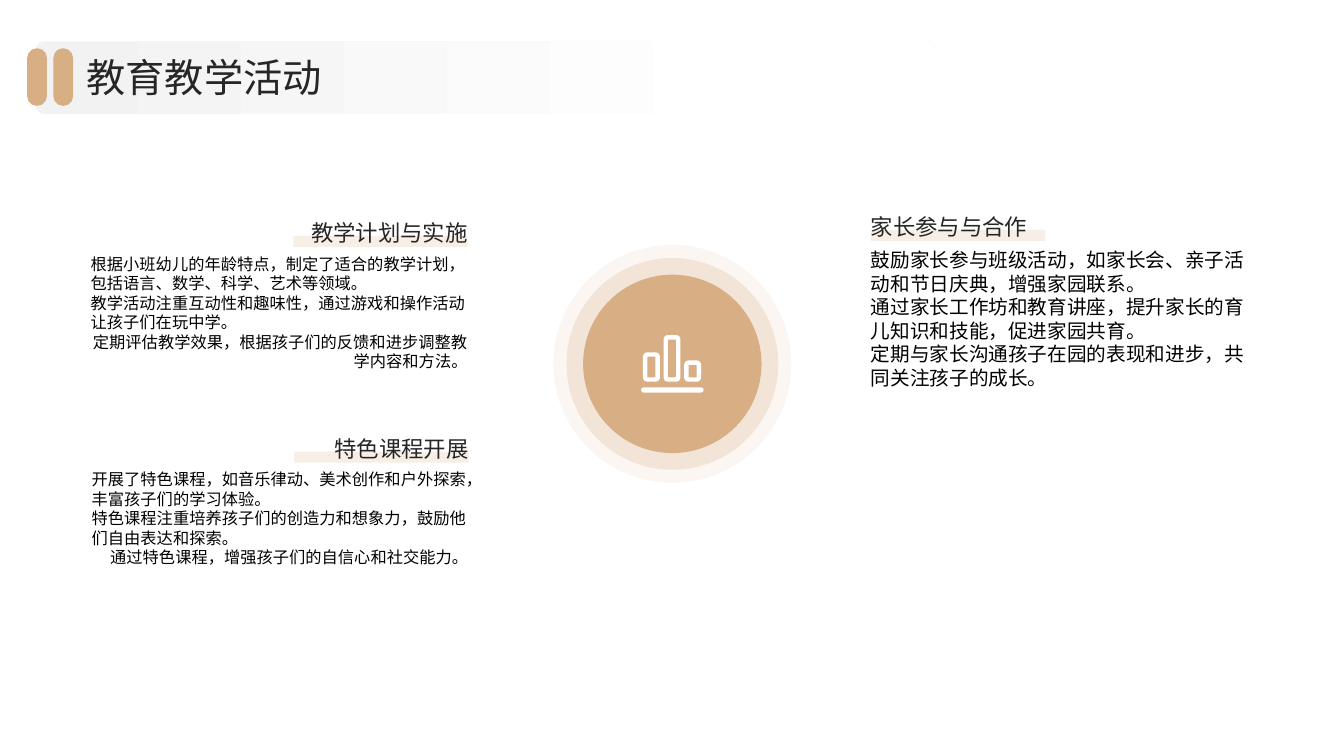
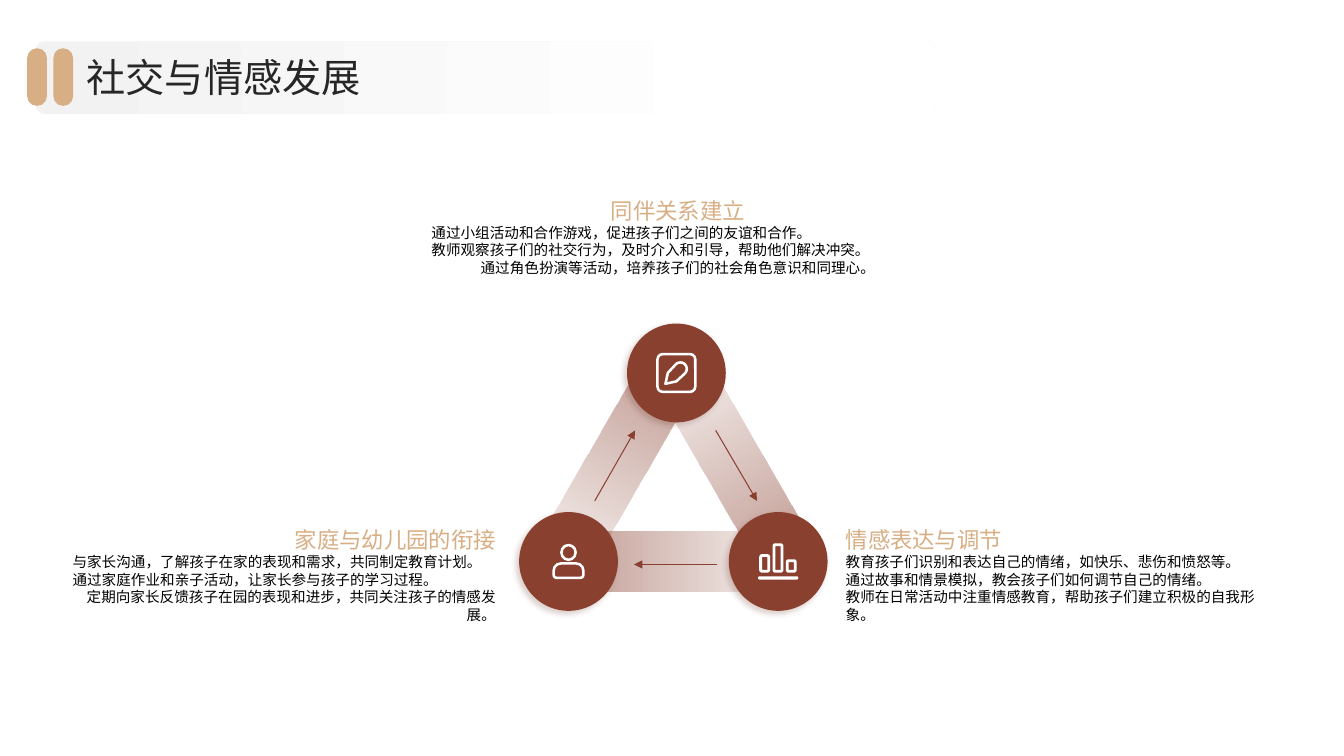
from dataclasses import dataclass
from math import cos, pi, sin

from lxml.etree import SubElement
from pptx import Presentation
from pptx.dml.color import RGBColor
from pptx.enum.shapes import MSO_CONNECTOR, MSO_SHAPE as SHAPE
from pptx.enum.text import MSO_ANCHOR as ANCHOR, MSO_AUTO_SIZE, PP_ALIGN as ALIGN
from pptx.oxml.ns import qn
from pptx.util import Inches, Pt

CELL = Inches(0.1)
COLUMNS, ROWS = 133.33, 75
FONT = "Noto Sans CJK SC"
COLOURS = {
    "sand": "D8AE84", "cream": "F7EFE6", "brick": "89402F", "shade": "673023",
    "ink": "262626", "black": "000000", "white": "FFFFFF", "mist": "F2F2F2",
}


def cells(count):
    return round(count * CELL)


def colour(name):
    return RGBColor.from_string(COLOURS[name])


@dataclass
class Box:
    left: float
    top: float
    width: float
    height: float

    def at(self, column, row, width, height):
        return Box(self.left + column, self.top + row, width, height)

    def share(self, x, y, width, height):
        return self.at(x * self.width, y * self.height,
                       width * self.width, height * self.height)

    def centred(self, width, height):
        return self.at((self.width - width) / 2, (self.height - height) / 2, width, height)

    def emu(self):
        return [cells(n) for n in (self.left, self.top, self.width, self.height)]


def set_alpha(shape, alphas):
    for tint, alpha in zip(shape._element.spPr.iter(qn("a:srgbClr")), alphas):
        SubElement(tint, qn("a:alpha")).set("val", str(alpha * 1000))


def add_shape(page, kind, box, fill, adjust=()):
    shape = page.shapes.add_shape(kind, *box.emu())
    shape.shadow.inherit = False
    shape.fill.solid()
    shape.fill.fore_color.rgb = colour(fill)
    shape.line.fill.background()
    for index, value in enumerate(adjust):
        shape.adjustments[index] = value
    return shape


def set_gradient(shape, stops, angle):
    shape.fill.gradient()
    shape.fill.gradient_angle = angle
    for stop, (position, name) in zip(shape.fill.gradient_stops, stops):
        stop.position = position
        stop.color.rgb = colour(name)


def set_outline(shape, thickness):
    shape.fill.background()
    shape.line.color.rgb = colour("white")
    shape.line.width = cells(thickness)


def add_outline(page, kind, box, thickness, adjust=()):
    inner = box.centred(box.width - thickness, box.height - thickness)
    set_outline(add_shape(page, kind, inner, "white", adjust), thickness)


def format_text(frame, size, ink, align, anchor):
    frame.margin_left = frame.margin_right = frame.margin_top = frame.margin_bottom = 0
    frame.word_wrap = True
    frame.auto_size = MSO_AUTO_SIZE.NONE
    frame.vertical_anchor = anchor
    for para in frame.paragraphs:
        para.alignment = align
        for span in para.runs:
            span.font.size = Pt(size)
            span.font.color.rgb = colour(ink)
            span.font.name = FONT
            SubElement(span._r.get_or_add_rPr(), qn("a:ea")).set("typeface", FONT)


def add_text(page, box, text, size, ink, align, anchor=ANCHOR.TOP):
    frame = page.shapes.add_textbox(*box.emu()).text_frame
    frame.text = text
    format_text(frame, size, ink, align, anchor)
    return frame


def add_topic(page, box, align, heading, lines, size, ink, heading_rows, body_row, marker=False):
    if marker:
        width = 17.3
        column = box.width - width if align == ALIGN.RIGHT else 0
        add_shape(page, SHAPE.RECTANGLE, box.at(column, 3.7, width, 1.1), "cream")
    add_text(page, box.at(0, 0, box.width, heading_rows), heading, 16, ink, align, ANCHOR.BOTTOM)
    body = add_text(page, box.at(0, body_row, box.width, box.height - body_row),
                    "\n".join(lines), size, "black", ALIGN.LEFT)
    for para in body.paragraphs:
        para.line_spacing = Pt(size * 1.2)
    body.paragraphs[-1].alignment = align


def chart_icon(page, box):
    thickness = 0.07 * box.width
    for index, top in enumerate((0.3, 0, 0.44)):
        bar = box.share(0.03 + 0.33 * index, top, 0.27, 0.81 - top)
        add_outline(page, SHAPE.ROUNDED_RECTANGLE, bar, thickness, [0.16])
    add_shape(page, SHAPE.ROUNDED_RECTANGLE, box.share(0, 0.91, 1, 0.09), "white", [0.5])


def person_icon(page, box):
    add_outline(page, SHAPE.OVAL, box.share(0.24, 0, 0.52, 0.49), 0.25)
    add_outline(page, SHAPE.ROUND_2_SAME_RECTANGLE, box.share(0, 0.52, 1, 0.48), 0.25, [0.5, 0.2])


def pencil_icon(page, box):
    add_outline(page, SHAPE.ROUNDED_RECTANGLE, box, 0.25, [0.14])
    turns = [pi * (0.75 - step / 12) for step in range(13)]
    outline = [(0.23, 0.77), (0.29, 0.5)]
    outline += [(0.6 + 0.16 * cos(turn), 0.4 - 0.16 * sin(turn)) for turn in turns]
    outline += [(0.5, 0.71)]
    points = [(cells(box.left + x * box.width), cells(box.top + y * box.height))
              for x, y in outline]
    builder = page.shapes.build_freeform(*points[0])
    builder.add_line_segments(points[1:], close=True)
    pencil = builder.convert_to_shape()
    pencil.shadow.inherit = False
    set_outline(pencil, 0.25)


def add_arrow(page, box, start, end):
    points = [cells(n) for x, y in (start, end) for n in (box.left + x, box.top + y)]
    arrow = page.shapes.add_connector(MSO_CONNECTOR.STRAIGHT, *points)
    arrow.line.color.rgb = colour("brick")
    arrow.line.width = Pt(0.75)
    outline = arrow._element.spPr.find(qn("a:ln"))
    SubElement(outline, qn("a:tailEnd")).set("type", "triangle")
    SubElement(arrow._element.spPr, qn("a:effectLst"))


def add_link(page, box, rotation):
    link = add_shape(page, SHAPE.ROUNDED_RECTANGLE, box, "brick", [0.5])
    link.rotation = rotation
    set_gradient(link, [(0, "brick"), (1, "brick")], 270)
    set_alpha(link, [0, 60])


def add_node(page, box, icon, icon_size):
    disc = add_shape(page, SHAPE.OVAL, box, "brick")
    effects = disc._element.spPr.find(qn("a:effectLst"))
    shadow = SubElement(effects, qn("a:outerShdw"), blurRad=str(Pt(4)), dist=str(Pt(3)),
                        dir="8100000", algn="tr", rotWithShape="0")
    tint = SubElement(shadow, qn("a:srgbClr"), val=COLOURS["shade"])
    SubElement(tint, qn("a:alpha"), val="21000")
    icon(page, box.centred(*icon_size))


def add_cycle(page, box):
    for column, row, rotation in ((21.25, 13.9, 330), (9.65, 13.9, 210), (15.25, 23.6, 90)):
        add_link(page, box.at(column, row, 0, 0).centred(5.9, 29), rotation)
    for column, row, icon, size in ((10.7, 0, pencil_icon, (4, 4)),
                                    (0, 18.7, person_icon, (3.2, 3.5)),
                                    (20.8, 18.7, chart_icon, (4, 3.6))):
        add_node(page, box.at(column, row, 9.8, 9.8), icon, size)
    for start, end in (((7.5, 17.6), (11.5, 10.6)),
                       ((19.5, 10.6), (23.6, 17.6)),
                       ((19.6, 23.9), (11.4, 23.9))):
        add_arrow(page, box, start, end)


def add_target(page, box):
    for share, alpha in ((1, 10), (0.89, 24), (0.75, 100)):
        ring = add_shape(page, SHAPE.OVAL, box.centred(box.width * share, box.height * share), "sand")
        set_alpha(ring, [alpha])
    chart_icon(page, box.centred(6.2, 5.7))


def dress_layout(page, layout):
    band = add_shape(page, SHAPE.ROUNDED_RECTANGLE, Box(3.5, 4.1, 89.4, 7.2), "mist", [0.14])
    set_gradient(band, [(0, "mist"), (0.8, "white")], 0)
    pills = [add_shape(page, SHAPE.ROUNDED_RECTANGLE, Box(left, 4.8, 1.95, 5.7), "sand", [0.48])
             for left in (2.7, 5.3)]
    for shape in (band, *pills):
        layout.shapes._spTree.append(shape._element)
    title = layout.placeholders[0]
    title.left, title.top, title.width, title.height = Box(8.6, 5.1, 116.7, 5.1).emu()


def set_title(page, text):
    frame = page.shapes.title.text_frame
    frame.text = text
    format_text(frame, 28, "ink", ALIGN.LEFT, ANCHOR.MIDDLE)


def build_activities(page):
    set_title(page, "教育教学活动")
    style = dict(ink="ink", heading_rows=4.7, body_row=5.5, marker=True)
    add_topic(page, Box(9, 19.7, 37.4, 20.6), ALIGN.RIGHT, "教学计划与实施", [
        "根据小班幼儿的年龄特点，制定了适合的教学计划，包括语言、数学、科学、艺术等领域。",
        "教学活动注重互动性和趣味性，通过游戏和操作活动让孩子们在玩中学。",
        "定期评估教学效果，根据孩子们的反馈和进步调整教学内容和方法。",
    ], 11.6, **style)
    add_topic(page, Box(9.1, 41.1, 37.4, 20.6), ALIGN.RIGHT, "特色课程开展", [
        "开展了特色课程，如音乐律动、美术创作和户外探索，丰富孩子们的学习体验。",
        "特色课程注重培养孩子们的创造力和想象力，鼓励他们自由表达和探索。",
        "通过特色课程，增强孩子们的自信心和社交能力。",
    ], 11.6, **style)
    add_topic(page, Box(86.4, 19.1, 37.4, 35), ALIGN.LEFT, "家长参与与合作", [
        "鼓励家长参与班级活动，如家长会、亲子活动和节日庆典，增强家园联系。",
        "通过家长工作坊和教育讲座，提升家长的育儿知识和技能，促进家园共育。",
        "定期与家长沟通孩子在园的表现和进步，共同关注孩子的成长。",
    ], 14, **style)
    add_target(page, Box(54.9, 24.3, 23.6, 23.6))


def build_social(page):
    set_title(page, "社交与情感发展")
    add_cycle(page, Box(51.5, 32.1, 30.6, 28.5))
    style = dict(size=10.4, ink="sand", heading_rows=4.9, body_row=4.9)
    add_topic(page, Box(42.8, 17.3, 48.9, 13.7), ALIGN.CENTER, "同伴关系建立", [
        "通过小组活动和合作游戏，促进孩子们之间的友谊和合作。",
        "教师观察孩子们的社交行为，及时介入和引导，帮助他们解决冲突。",
        "通过角色扮演等活动，培养孩子们的社会角色意识和同理心。",
    ], **style)
    add_topic(page, Box(7.2, 50, 42, 13.7), ALIGN.RIGHT, "家庭与幼儿园的衔接", [
        "与家长沟通，了解孩子在家的表现和需求，共同制定教育计划。",
        "通过家庭作业和亲子活动，让家长参与孩子的学习过程。",
        "定期向家长反馈孩子在园的表现和进步，共同关注孩子的情感发展。",
    ], **style)
    add_topic(page, Box(83.9, 50, 42, 13.7), ALIGN.LEFT, "情感表达与调节", [
        "教育孩子们识别和表达自己的情绪，如快乐、悲伤和愤怒等。",
        "通过故事和情景模拟，教会孩子们如何调节自己的情绪。",
        "教师在日常活动中注重情感教育，帮助孩子们建立积极的自我形象。",
    ], **style)


def main():
    deck = Presentation()
    deck.slide_width, deck.slide_height = cells(COLUMNS), cells(ROWS)
    layout = deck.slide_layouts[5]
    activities, social = [deck.slides.add_slide(layout) for _ in range(2)]
    dress_layout(activities, layout)
    build_activities(activities)
    build_social(social)
    deck.save("out.pptx")


if __name__ == "__main__":
    main()
